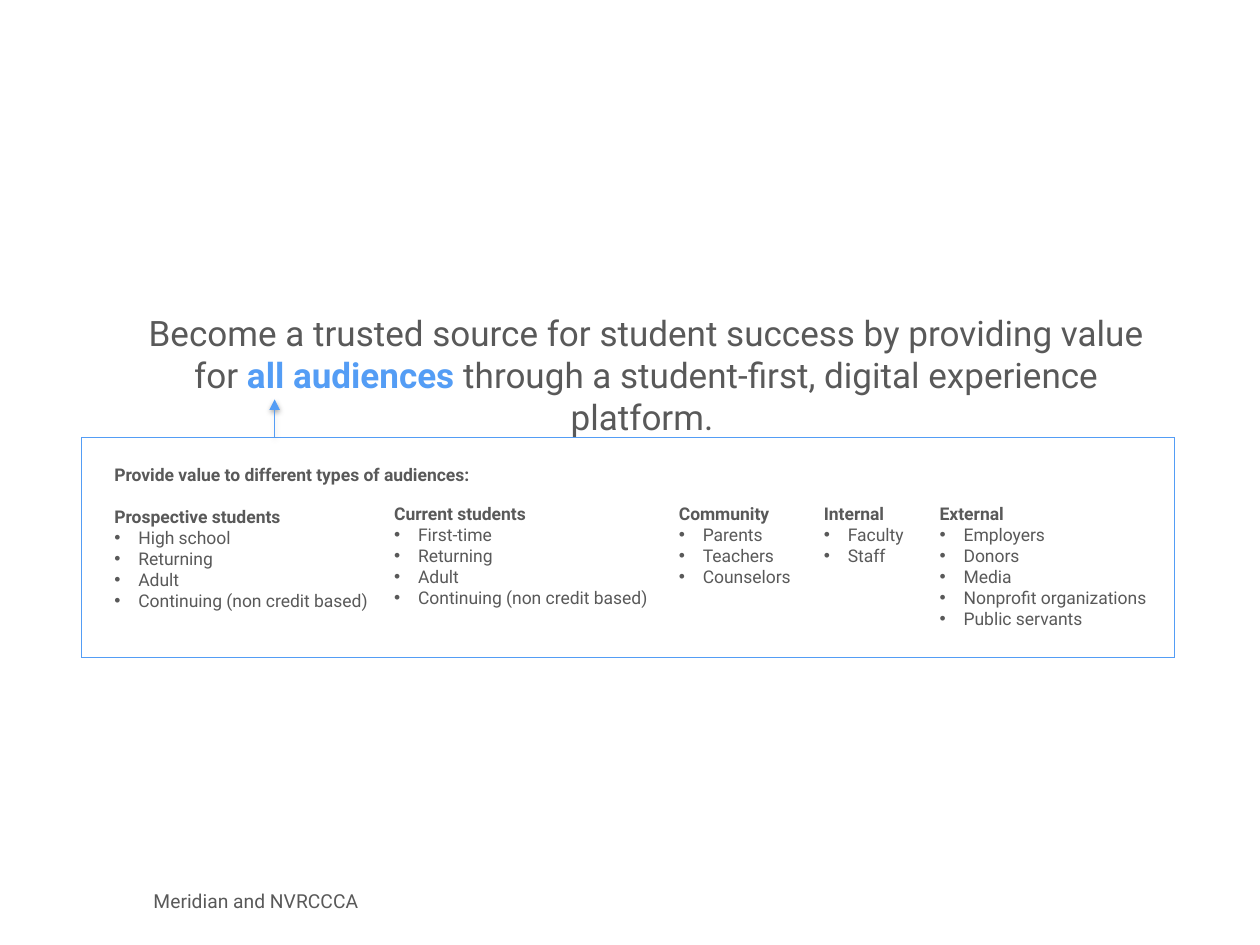
from lxml import etree
from pptx import Presentation, util as u
from pptx.dml.color import RGBColor
from pptx.enum import shapes, text
from pptx.oxml import parse_xml
from pptx.oxml.ns import nsdecls, qn

COLORS = {"text": "595959", "accent": "549DF5", "shadow": "000000"}
FONT = "Roboto"
WIDTH, HEIGHT = 10, 7.5
PANEL = (0.65, 3.47, 8.67, 1.75)
LIST_TOP = 3.94
ARROW_X, ARROW_LENGTH = 2.18, 0.3
INDENT = u.Inches(0.19)

STATEMENT = [
    ("Become a trusted source for student success by providing value for ", {}),
    ("all audiences", {"color": "accent", "bold": True}),
    (" through a student-first, digital experience platform. ", {}),
]
PANEL_HEADING = "Provide value to different types of audiences:"
AUDIENCES = [
    (0.81, 3.63, 3.26, 1.28, "Prospective students",
     ["High school", "Returning", "Adult", "Continuing (non credit based)"]),
    (3.03, LIST_TOP, 2.24, 1.11, "Current students",
     ["First-time", "Returning", "Adult", "Continuing (non credit based)"]),
    (5.29, LIST_TOP, 1.1, 0.77, "Community", ["Parents", "Teachers", "Counselors"]),
    (6.44, LIST_TOP, 0.85, 0.61, "Internal", ["Faculty", "Staff"]),
    (7.36, LIST_TOP, 1.86, 1.11, "External",
     ["Employers", "Donors", "Media", "Nonprofit organizations", "Public servants"]),
]


def rgb(name):
    """Return a palette colour."""
    return RGBColor.from_string(COLORS[name])


def write(paragraph, content, size=10, color="text", bold=False):
    """Add a formatted run to a paragraph."""
    run = paragraph.add_run()
    run.text = content
    run.font.name = FONT
    run.font.size = u.Pt(size)
    run.font.bold = bold
    run.font.color.rgb = rgb(color)


def next_paragraph(frame):
    """Return the empty first paragraph of a frame, or a new one."""
    first = frame.paragraphs[0]
    return frame.add_paragraph() if first.runs else first


def add_bullet(paragraph):
    """Give a paragraph a hanging round bullet."""
    properties = paragraph._p.get_or_add_pPr()
    properties.set("marL", str(INDENT))
    properties.set("indent", str(-INDENT))
    etree.SubElement(properties, qn("a:buFont"), typeface="Arial")
    etree.SubElement(properties, qn("a:buChar"), char="•")


def add_text_box(slide, *box):
    """Add an empty text box and return its frame."""
    return slide.shapes.add_textbox(*map(u.Inches, box)).text_frame


def add_statement(slide):
    """Place the vision statement in the title placeholder."""
    title = slide.shapes.title
    title.left, title.top, title.width, title.height = map(
        u.Inches, (0.94, 2.42, 8.38, 2.05))
    frame = title.text_frame
    frame.vertical_anchor = text.MSO_ANCHOR.TOP
    frame.auto_size = text.MSO_AUTO_SIZE.NONE
    paragraph = frame.paragraphs[0]
    paragraph.alignment = text.PP_ALIGN.CENTER
    for content, style in STATEMENT:
        write(paragraph, content, size=20, **style)


def add_audience(slide, left, top, width, height, name, members, heading=None):
    """Add an audience name with its bulleted members."""
    frame = add_text_box(slide, left, top, width, height)
    frame.word_wrap = False
    frame.auto_size = text.MSO_AUTO_SIZE.SHAPE_TO_FIT_TEXT
    if heading:
        write(next_paragraph(frame), heading, bold=True)
    title = next_paragraph(frame)
    if heading:
        title.space_before = u.Pt(12)
    write(title, name, bold=True)
    for member in members:
        paragraph = next_paragraph(frame)
        add_bullet(paragraph)
        write(paragraph, member)


def add_panel(slide):
    """Outline the audience area with a hairline frame."""
    panel = slide.shapes.add_shape(shapes.MSO_SHAPE.FRAME, *map(u.Inches, PANEL))
    panel.adjustments[0] = 0
    panel.shadow.inherit = False
    panel.fill.solid()
    panel.fill.fore_color.rgb = rgb("accent")
    panel.line.color.rgb = rgb("accent")
    panel.line.width = 0


def add_arrow(slide):
    """Point from the panel up to the highlighted words."""
    start = PANEL[1]
    arrow = slide.shapes.add_connector(
        shapes.MSO_CONNECTOR.STRAIGHT,
        *map(u.Inches, (ARROW_X, start, ARROW_X, start - ARROW_LENGTH)))
    arrow.line.color.rgb = rgb("accent")
    arrow.line.width = u.Pt(0.25)
    etree.SubElement(arrow.line._get_or_add_ln(), qn("a:tailEnd"), type="triangle")
    arrow._element.spPr.append(parse_xml(
        f'<a:effectLst {nsdecls("a")}><a:outerShdw blurRad="{u.Pt(3.1)}" '
        f'dist="{u.Pt(1.6)}" dir="5400000" rotWithShape="0">'
        f'<a:srgbClr val="{COLORS["shadow"]}"><a:alpha val="38000"/></a:srgbClr>'
        '</a:outerShdw></a:effectLst>'))


def add_footer(slide):
    """Name the partners at the foot of the slide."""
    frame = add_text_box(slide, 1.12, 6.95, 4.9, 0.4)
    frame.word_wrap = True
    frame.vertical_anchor = text.MSO_ANCHOR.MIDDLE
    write(frame.paragraphs[0], "Meridian and NVRCCCA", size=11)


def main():
    """Build and save the slide."""
    presentation = Presentation()
    presentation.slide_width = u.Inches(WIDTH)
    presentation.slide_height = u.Inches(HEIGHT)
    slide = presentation.slides.add_slide(
        presentation.slide_layouts.get_by_name("Title Only"))
    add_statement(slide)
    add_footer(slide)
    first, *others = AUDIENCES
    add_audience(slide, *first, heading=PANEL_HEADING)
    add_panel(slide)
    add_arrow(slide)
    for audience in others:
        add_audience(slide, *audience)
    presentation.save("out.pptx")


if __name__ == "__main__":
    main()
